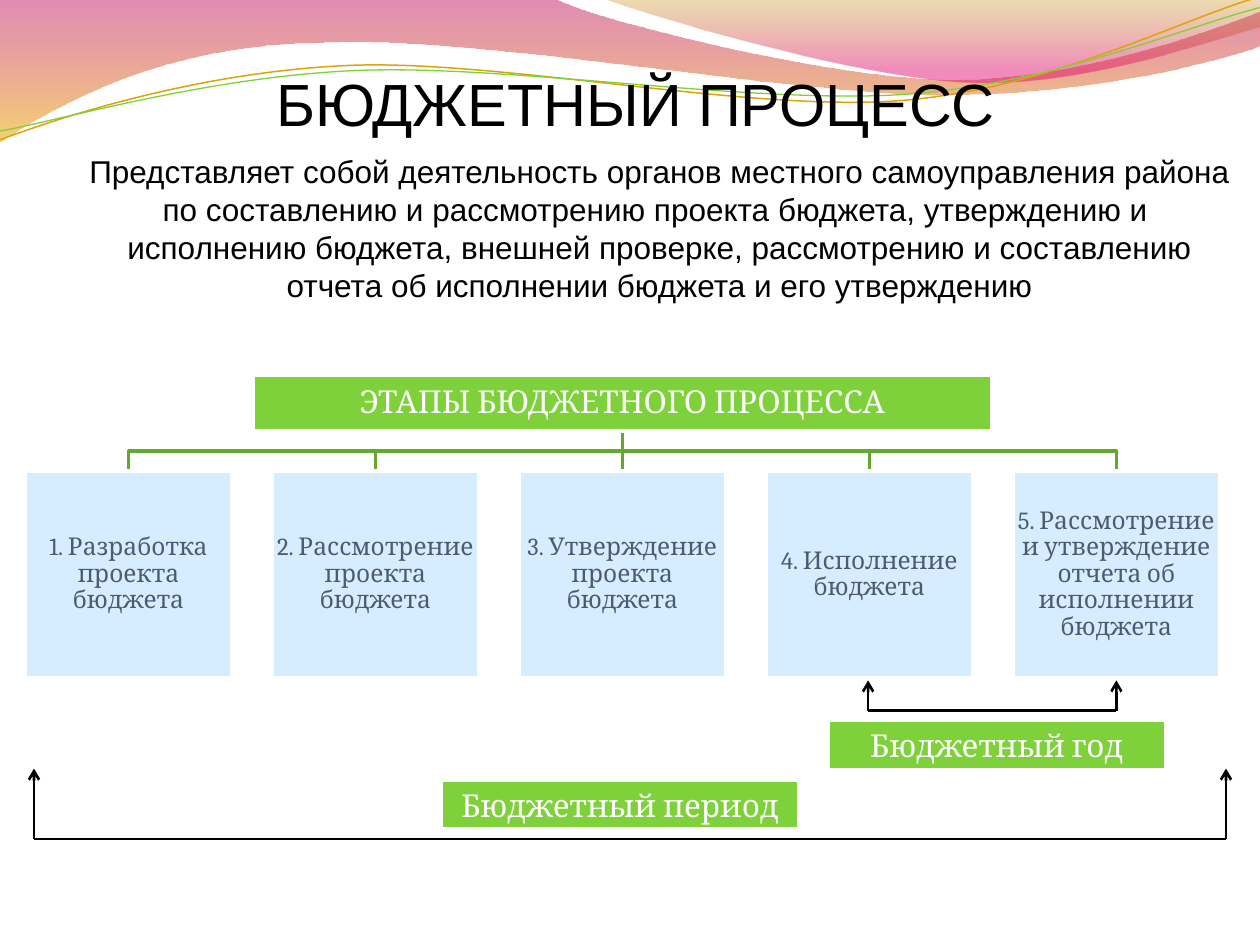
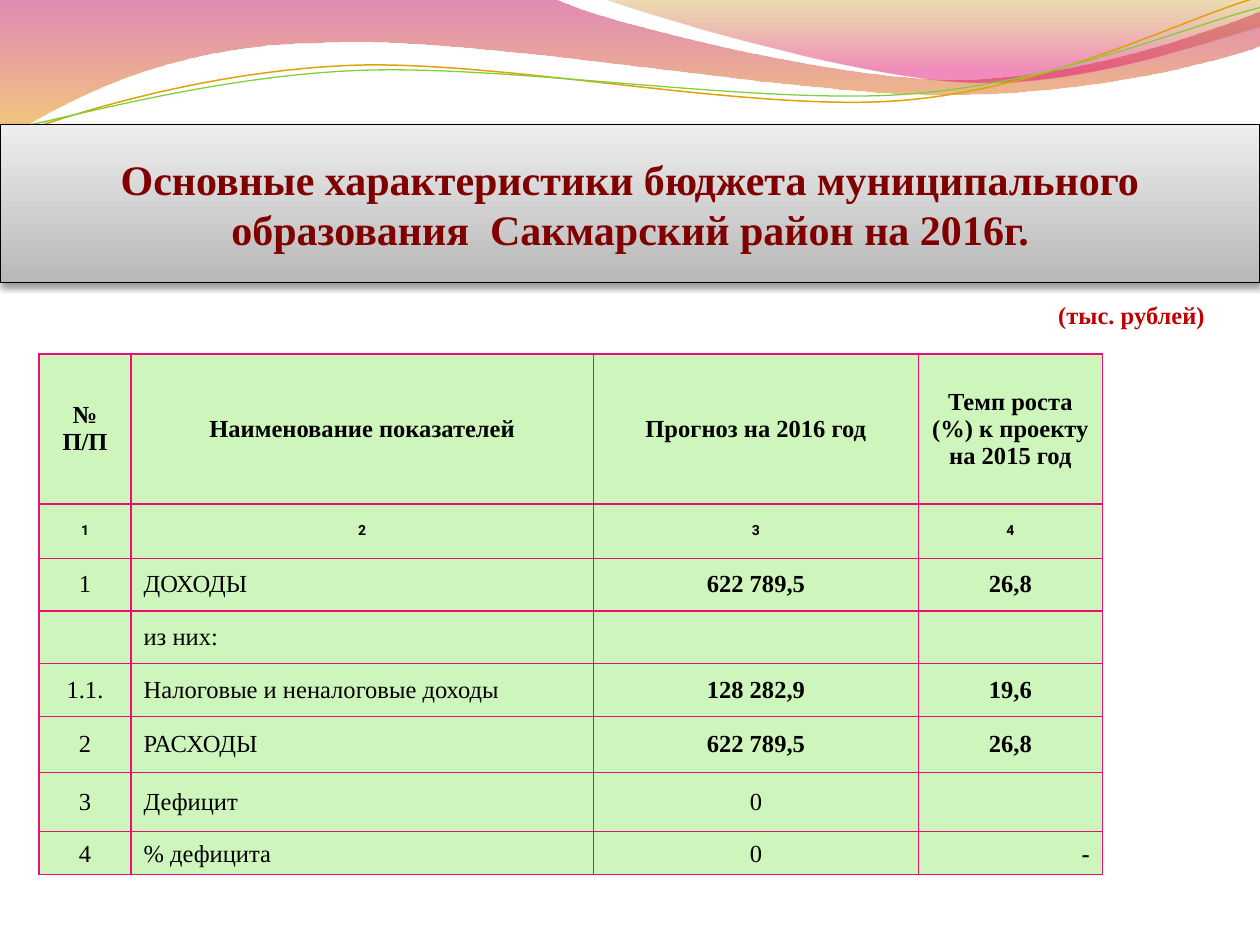
import dataclasses

import pptx
import pptx.dml.color
import pptx.enum.shapes
import pptx.enum.text
import pptx.oxml.ns
import pptx.util
from lxml import etree

Inches = pptx.util.Inches
Pt = pptx.util.Pt
RGB = pptx.dml.color.RGBColor.from_string
qn = pptx.oxml.ns.qn
ALIGN = pptx.enum.text.PP_ALIGN
ANCHOR = pptx.enum.text.MSO_ANCHOR
TITLE_ONLY = 5


@dataclasses.dataclass(frozen=True)
class Theme:
    sans: str = "Arial"
    serif: str = "Times New Roman"
    diagram: str = "Cambria"
    index: str = "Roboto"
    black: str = "000000"
    white: str = "FFFFFF"
    green: str = "7FD13B"
    dark_green: str = "66A72F"
    pale_green: str = "CEF5BC"
    gold: str = "E0A209"
    pale_blue: str = "D6ECFF"
    slate: str = "4E5B6F"
    maroon: str = "800000"
    red: str = "C00000"
    pink: str = "EA0F77"
    title: int = 34
    band_title: int = 24
    body: int = 18
    small: int = 14
    tiny: int = 8
    # gradients: (position %, colour, opacity %)
    wide_wave: tuple = ((0, "BD0059", 45), (100, "F0AB00", 55))
    right_wave: tuple = ((0, "C38B00", 30), (80, "E1006B", 45))
    band: tuple = ((0, "EEEEEE", 100), (100, "B8B8B8", 100))


T = Theme()

# Header waves: start point, then lines (2 numbers) or Bezier curves (6 numbers)
WIDE_WAVE = [(0, -0.01), (4.4, -0.01), (4.76, 0.17, 6.64, 0.63, 7.58, 0.63),
             (8.53, 0.63, 9.58, 0.26, 10, 0.09), (10.01, 0.36),
             (9.83, 0.44, 8.7, 0.76, 7.46, 0.75),
             (6.22, 0.75, 3.82, 0.28, 2.57, 0.34),
             (1.29, 0.35, 0.46, 0.83, -0.01, 1.13)]
RIGHT_WAVE = [(4.79, -0.01), (5.09, 0.11, 6.82, 0.62, 7.69, 0.65),
              (8.56, 0.69, 9.61, 0.32, 10, 0.21), (10, 0)]
GOLD_LINE = [(0, 1.11), (0.48, 0.93, 1.58, 0.57, 2.77, 0.52),
             (3.95, 0.47, 5.93, 0.89, 7.13, 0.8), (8.33, 0.71, 9.38, 0.15, 9.98, -0.02)]
GREEN_LINE = [(0, 1.04), (0.47, 0.96, 1.64, 0.61, 2.83, 0.56),
              (4.03, 0.51, 5.97, 0.83, 7.17, 0.75), (8.36, 0.67, 9.41, 0.21, 10, 0.06)]

STAGES = ["1. Разработка проекта бюджета", "2. Рассмотрение проекта бюджета",
          "3. Утверждение проекта бюджета", "4. Исполнение бюджета",
          "5. Рассмотрение и утверждение отчета об исполнении бюджета"]

COL_WIDTHS = [0.73, 3.67, 2.58, 1.46]
ROW_HEIGHTS = [1.19, 0.43, 0.42, 0.42, 0.42, 0.44, 0.47, 0.34]
BUDGET_ROWS = [
    ["№ П/П", "Наименование показателей", "Прогноз на 2016 год",
     "Темп роста (%) к проекту на 2015 год"],
    ["1", "2", "3", "4"],
    ["1", "ДОХОДЫ", "622 789,5", "26,8"],
    ["", "из них:", "", ""],
    ["1.1.", "Налоговые и неналоговые доходы", "128 282,9", "19,6"],
    ["2", "РАСХОДЫ", "622 789,5", "26,8"],
    ["3", "Дефицит", "0", ""],
    ["4", "% дефицита", "0", "-"],
]


# Formatting helpers
def apply(obj, fmt):
    for name, value in fmt.items():
        setattr(obj, name, value)


def write(tf, text, size, font, color, bold=False, align=ALIGN.CENTER, spacing=None):
    p = tf.paragraphs[0]
    apply(p, {"alignment": align, "line_spacing": spacing})
    r = p.add_run()
    r.text = text
    apply(r.font, {"size": Pt(size), "name": font, "bold": bold})
    r.font.color.rgb = RGB(color)


def set_frame(tf, anchor, inset=None):
    apply(tf, {"word_wrap": True, "vertical_anchor": anchor,
               "auto_size": pptx.enum.text.MSO_AUTO_SIZE.NONE})
    if inset is not None:
        sides = ("left", "top", "right", "bottom")
        apply(tf, {f"margin_{side}": Inches(inset) for side in sides})


def set_fill(fill, color):
    fill.solid()
    fill.fore_color.rgb = RGB(color)


def set_line(line, color, width):
    line.color.rgb = RGB(color)
    line.width = Pt(width)


def add_color(parent, color, opacity=100):
    clr = etree.SubElement(parent, qn("a:srgbClr"), val=color)
    if opacity < 100:
        etree.SubElement(clr, qn("a:alpha"), val=str(opacity * 1000))


def set_gradient(sp, stops):
    """Vertical gradient, first stop at the top."""
    sp.fill.gradient()
    sp.fill.gradient_angle = 270
    gs_list = sp.element.spPr.find(qn("a:gradFill")).find(qn("a:gsLst"))
    for gs in list(gs_list):
        gs_list.remove(gs)
    for pos, color, opacity in stops:
        gs = etree.SubElement(gs_list, qn("a:gs"), pos=str(pos * 1000))
        add_color(gs, color, opacity)


# Element builders
def add_title(s, text, box, anchor, size, font, color, bold=False):
    sp = s.shapes.title
    apply(sp, dict(zip(("left", "top", "width", "height"), map(Inches, box))))
    set_frame(sp.text_frame, anchor)
    write(sp.text_frame, text, size, font, color, bold)
    return sp


def add_text(s, text, box, *style, **options):
    sp = s.shapes.add_textbox(*map(Inches, box))
    set_frame(sp.text_frame, ANCHOR.TOP)
    write(sp.text_frame, text, *style, **options)


def add_box(s, text, box, fill, color, size, inset=None, spacing=None):
    sp = s.shapes.add_shape(pptx.enum.shapes.MSO_SHAPE.RECTANGLE, *map(Inches, box))
    sp.shadow.inherit = False
    set_fill(sp.fill, fill)
    set_line(sp.line, T.white, 2)
    set_frame(sp.text_frame, ANCHOR.MIDDLE, inset)
    write(sp.text_frame, text, size, T.diagram, color, spacing=spacing)


def add_line(s, start, end, arrow=False):
    cn = s.shapes.add_connector(pptx.enum.shapes.MSO_CONNECTOR.STRAIGHT,
                                *map(Inches, (*start, *end)))
    set_line(cn.line, T.black, 1.5)
    sp_pr = cn.element.spPr
    if arrow:
        etree.SubElement(sp_pr.find(qn("a:ln")), qn("a:tailEnd"), type="arrow")
    etree.SubElement(sp_pr, qn("a:effectLst"))


def add_outline(s, points, closed=False):
    points = [(Inches(x), Inches(y)) for x, y in points]
    builder = s.shapes.build_freeform(*points[0])
    builder.add_line_segments(points[1:], close=closed)
    sp = builder.convert_to_shape()
    sp.shadow.inherit = False
    sp.fill.background()
    sp.line.fill.background()
    return sp


def add_wave(s, parts, closed=False):
    """Lay out all nodes as lines, then join each three into a Bezier curve."""
    nodes = [part[i:i + 2] for part in parts for i in range(0, len(part), 2)]
    sp = add_outline(s, nodes, closed)
    segments = iter(list(sp.element.iter(qn("a:lnTo"))))
    for part in parts[1:]:
        first = next(segments)
        if len(part) == 2:
            continue
        curve = etree.Element(qn("a:cubicBezTo"))
        first.addprevious(curve)
        for segment in (first, next(segments), next(segments)):
            curve.append(segment[0])
            segment.getparent().remove(segment)
    return sp


def add_header_waves(prs, s):
    """Draw the header waves and move them to the master that all slides share."""
    waves = []
    for parts, stops in ((WIDE_WAVE, T.wide_wave), (RIGHT_WAVE, T.right_wave)):
        sp = add_wave(s, parts, closed=True)
        set_gradient(sp, stops)
        waves.append(sp)
    for parts, color, width in ((GOLD_LINE, T.gold, 0.85), (GREEN_LINE, T.green, 0.75)):
        sp = add_wave(s, parts)
        set_line(sp.line, color, width)
        waves.append(sp)
    for sp in waves:
        prs.slide_master.shapes.element.append(sp.element)


def add_bracket(s, left, right, base, tip):
    add_line(s, (left, base), (right, base))
    for x in (left, right):
        add_line(s, (x, base), (x, tip), arrow=True)


def add_stage_tree(s):
    side, step, top, first = 1.64, 1.96, 3.74, 0.2
    root_bottom, bus = 3.42, 3.58
    centers = [first + side / 2 + i * step for i in range(len(STAGES))]
    trunk = centers[len(STAGES) // 2]
    for x in centers:
        sp = add_outline(s, [(trunk, root_bottom), (trunk, bus), (x, bus), (x, top)])
        set_line(sp.line, T.dark_green, 2)
    tight = {"inset": 0.01, "spacing": 0.9}
    add_box(s, "ЭТАПЫ БЮДЖЕТНОГО ПРОЦЕССА", (2.01, 2.98, 5.86, 0.44),
            T.green, T.white, T.body, **tight)
    for x, stage in zip(centers, STAGES):
        add_box(s, stage, (x - side / 2, top, side, side),
                T.pale_blue, T.slate, T.small, **tight)


def set_borders(tc_pr, color, width):
    for edge in ("a:lnL", "a:lnR", "a:lnT", "a:lnB"):
        ln = etree.SubElement(tc_pr, qn(edge), w=str(Pt(width)))
        add_color(etree.SubElement(ln, qn("a:solidFill")), color)


def add_budget_table(s):
    last = len(BUDGET_ROWS) - 1
    box = (0.31, 2.81, sum(COL_WIDTHS), sum(ROW_HEIGHTS))
    table = s.shapes.add_table(len(BUDGET_ROWS), len(COL_WIDTHS), *map(Inches, box)).table
    apply(table, {"first_row": False, "horz_banding": False})
    for col, width in zip(table.columns, COL_WIDTHS):
        col.width = Inches(width)
    for row, height in zip(table.rows, ROW_HEIGHTS):
        row.height = Inches(height)
    for i, texts in enumerate(BUDGET_ROWS):
        for j, text in enumerate(texts):
            cell = table.cell(i, j)
            cell.vertical_anchor = ANCHOR.BOTTOM if i == last else ANCHOR.MIDDLE
            set_borders(cell._tc.get_or_add_tcPr(), T.pink, 0.75)
            set_fill(cell.fill, T.pale_green)
            if not text:
                continue
            align = ALIGN.CENTER
            if i > 1 and j == 1:
                align = ALIGN.LEFT
            elif text == "-":
                align = ALIGN.RIGHT
            size, font = (T.tiny, T.index) if i == 1 else (T.small, T.serif)
            bold = i < 2 or (j > 1 and text != "0")
            write(cell.text_frame, text, size, font, T.black, bold, align)


def add_band_look(sp):
    set_gradient(sp, T.band)
    set_line(sp.line, T.black, 0.75)
    effects = etree.SubElement(sp.element.spPr, qn("a:effectLst"))
    shadow = etree.SubElement(effects, qn("a:outerShdw"), blurRad=str(Pt(4)),
                              dist=str(Pt(2)), dir="5400000", rotWithShape="0")
    add_color(shadow, T.black, 38)


# Slides
def build_process_slide(s):
    add_title(s, "БЮДЖЕТНЫЙ ПРОЦЕСС", (1.5, 0.48, 7.09, 0.67), ANCHOR.TOP,
              T.title, T.sans, T.black)
    add_text(s, "Представляет собой деятельность органов местного самоуправления района "
             "по составлению и рассмотрению проекта бюджета, утверждению и  исполнению "
             "бюджета, внешней проверке, рассмотрению и составлению отчета об исполнении "
             "бюджета и его утверждению", (0.51, 1.16, 9.45, 1.31),
             T.body, T.sans, T.black)
    add_stage_tree(s)
    add_box(s, "Бюджетный год", (6.57, 5.72, 2.68, 0.39), T.green, T.white, T.body)
    add_box(s, "Бюджетный период", (3.5, 6.19, 2.84, 0.39), T.green, T.white, T.body)
    add_bracket(s, 0.27, 9.73, 6.66, 6.1)
    add_bracket(s, 6.89, 8.86, 5.64, 5.4)


def build_budget_slide(s):
    band = add_title(s, "Основные характеристики бюджета муниципального образования  "
                     "Сакмарский район на 2016г.", (0, 0.99, 10, 1.25), ANCHOR.MIDDLE,
                     T.band_title, T.serif, T.maroon, bold=True)
    add_band_look(band)
    add_text(s, "(тыс. рублей)", (8.3, 2.33, 1.42, 0.33),
             T.small, T.serif, T.red, bold=True, align=ALIGN.LEFT)
    add_budget_table(s)


def main():
    prs = pptx.Presentation()
    apply(prs, {"slide_width": Inches(10), "slide_height": Inches(7.5)})
    layout = prs.slide_layouts[TITLE_ONLY]
    process, budget = (prs.slides.add_slide(layout) for _ in range(2))
    add_header_waves(prs, process)
    build_process_slide(process)
    build_budget_slide(budget)
    prs.save("out.pptx")


if __name__ == "__main__":
    main()
